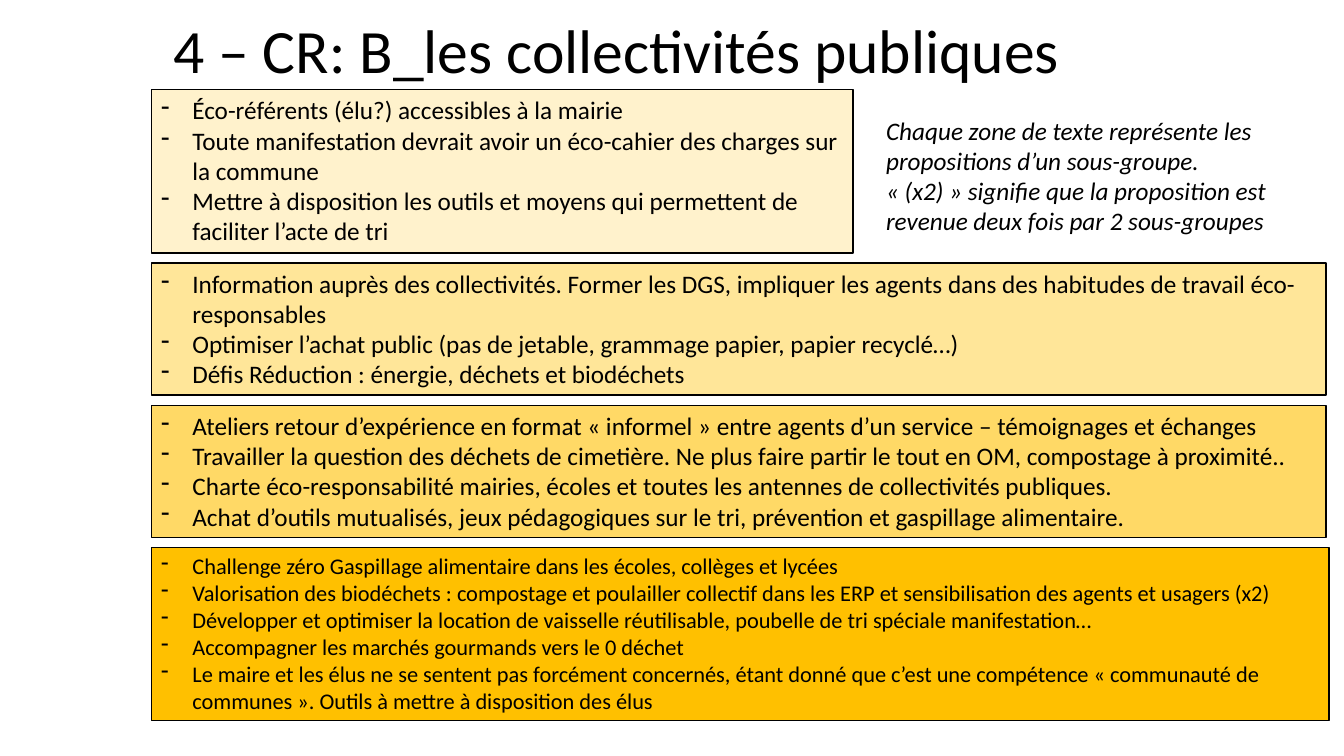
from lxml import etree
from pptx import Presentation
from pptx import util as u
from pptx.dml.color import RGBColor
from pptx.enum import shapes, text
from pptx.oxml import ns

BLACK = RGBColor(0x00, 0x00, 0x00)
CREAM = RGBColor(0xFF, 0xF2, 0xCC)
PALE_YELLOW = RGBColor(0xFF, 0xE6, 0x99)
YELLOW = RGBColor(0xFF, 0xD9, 0x66)
AMBER = RGBColor(0xFF, 0xC0, 0x00)

FONT = "Calibri"
CELL = u.Inches(0.1)
INDENT = 3.1
PANEL_LEFT = 15
PANEL_TOP = 8.9
PANEL_GAP = 1

PANELS = [
    (CREAM, 69.6, 16.2, 18, [
        "Éco-référents (élu?) accessibles à la mairie",
        "Toute manifestation devrait avoir un éco-cahier des charges sur la commune",
        "Mettre à disposition les outils et moyens qui permettent de faciliter l’acte de tri",
    ]),
    (PALE_YELLOW, 116.5, 13.1, 18, [
        "Information auprès des collectivités. Former les DGS, impliquer les agents "
        "dans des habitudes de travail éco-responsables",
        "Optimiser l’achat public (pas de jetable, grammage papier, papier recyclé…)",
        "Défis Réduction : énergie, déchets et biodéchets",
    ]),
    (YELLOW, 116.5, 13.1, 18, [
        "Ateliers retour d’expérience en format « informel » entre agents d’un service "
        "– témoignages et échanges",
        "Travailler la question des déchets de cimetière. Ne plus faire partir le tout "
        "en OM, compostage à proximité..",
        "Charte éco-responsabilité mairies, écoles et toutes les antennes de "
        "collectivités publiques.",
        "Achat d’outils mutualisés, jeux pédagogiques sur le tri, prévention et "
        "gaspillage alimentaire.",
    ]),
    (AMBER, 116.8, 17.2, 16, [
        "Challenge zéro Gaspillage alimentaire dans les écoles, collèges et lycées",
        "Valorisation des biodéchets : compostage et poulailler collectif dans les ERP "
        "et sensibilisation des agents et usagers (x2)",
        "Développer et optimiser la location de vaisselle réutilisable, poubelle de tri "
        "spéciale manifestation…",
        "Accompagner les marchés gourmands vers le 0 déchet",
        "Le maire et les élus ne se sentent pas forcément concernés, étant donné que "
        "c’est une compétence « communauté de communes ». Outils à mettre à "
        "disposition des élus",
    ]),
]

NOTE = [
    "Chaque zone de texte représente les propositions d’un sous-groupe.",
    "« (x2) » signifie que la proposition est revenue deux fois par 2 sous-groupes",
]


def grid(*cells):
    return [u.Emu(round(cell * CELL)) for cell in cells]


def add_dash(para):
    properties = para._p.get_or_add_pPr()
    indent = grid(INDENT)[0]
    properties.set("marL", str(indent))
    properties.set("indent", str(-indent))
    etree.SubElement(properties, ns.qn("a:buFontTx"))
    etree.SubElement(properties, ns.qn("a:buChar")).set("char", "-")


def write(box, lines, size=18, italic=None, dashed=False):
    frame = box.text_frame
    frame.word_wrap = True
    frame.auto_size = text.MSO_AUTO_SIZE.SHAPE_TO_FIT_TEXT
    frame.vertical_anchor = text.MSO_ANCHOR.TOP
    for index, line in enumerate(lines):
        para = frame.add_paragraph() if index else frame.paragraphs[0]
        para.alignment = text.PP_ALIGN.LEFT
        if dashed:
            add_dash(para)
        span = para.add_run()
        span.text = line
        span.font.name = FONT
        span.font.size = u.Pt(size)
        span.font.italic = italic
        span.font.color.rgb = BLACK


def add_label(page, place, lines, **style):
    write(page.shapes.add_textbox(*grid(*place)), lines, **style)


def add_panel(page, place, fill, lines, **style):
    box = page.shapes.add_shape(shapes.MSO_SHAPE.RECTANGLE, *grid(*place))
    box.shadow.inherit = False
    box.fill.solid()
    box.fill.fore_color.rgb = fill
    box.line.color.rgb = BLACK
    box.line.width = u.Pt(1)
    write(box, lines, dashed=True, **style)


def main():
    deck = Presentation()
    deck.slide_width = u.Inches(13.33)
    deck.slide_height = u.Inches(7.5)
    page = deck.slides.add_slide(deck.slide_layouts[6])

    add_label(page, (16.2, 0.7, 99.2, 8.4),
              ["4 – CR: B_les collectivités publiques"], size=44)
    top = PANEL_TOP
    for fill, width, height, size, lines in PANELS:
        add_panel(page, (PANEL_LEFT, top, width, height), fill, lines, size=size)
        top += height + PANEL_GAP
    add_label(page, (86.9, 10.9, 40.2, 13.1), NOTE, italic=True)

    deck.save("out.pptx")


if __name__ == "__main__":
    main()
